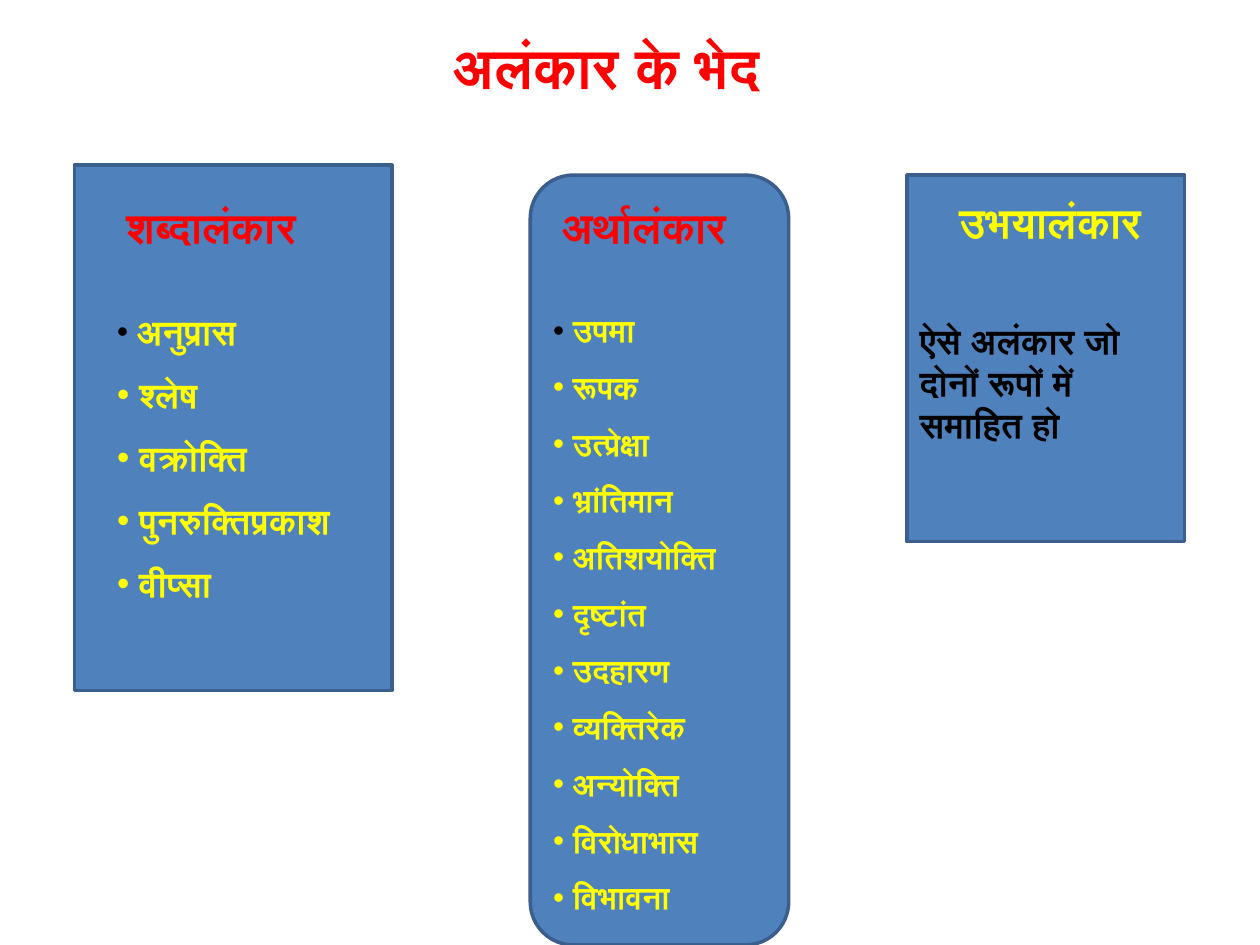
from lxml.etree import SubElement
from pptx import Presentation
from pptx.dml.color import RGBColor
from pptx.enum.shapes import MSO_SHAPE as Shape
from pptx.enum.text import MSO_AUTO_SIZE as AutoSize
from pptx.oxml.ns import qn
from pptx.util import Cm, Pt

COLORS = {
    "panel": "4F81BD",
    "border": "3A5F8C",
    "red": "FF0000",
    "yellow": "FFFF00",
    "black": "000000",
}
FONT = "Calibri"

SHABDA_KINDS = ["अनुप्रास", "श्लेष", "वक्रोक्ति", "पुनरुक्तिप्रकाश", "वीप्सा"]
ARTHA_KINDS = [
    "उपमा", "रूपक", "उत्प्रेक्षा", "भ्रांतिमान", "अतिशयोक्ति", "दृष्टांत",
    "उदहारण", "व्यक्तिरेक", "अन्योक्ति", "विरोधाभास", "विभावना",
]


def color(name):
    return RGBColor.from_string(COLORS[name])


def style(font, size, color_name):
    font.name = FONT
    font.size = Pt(size)
    font.bold = True
    font.color.rgb = color(color_name)


def add_panel(slide, preset, left, top, width, height):
    panel = slide.shapes.add_shape(preset, Cm(left), Cm(top), Cm(width), Cm(height))
    panel.shadow.inherit = False
    panel.fill.solid()
    panel.fill.fore_color.rgb = color("panel")
    panel.line.color.rgb = color("border")
    panel.line.width = Pt(2)


def add_frame(slide, left, top, width, height, wrap):
    box = slide.shapes.add_textbox(Cm(left), Cm(top), Cm(width), Cm(height))
    frame = box.text_frame
    frame.word_wrap = wrap
    frame.auto_size = AutoSize.SHAPE_TO_FIT_TEXT
    return frame


def add_text(slide, text, left, top, width, height, size, color_name, wrap=False):
    paragraph = add_frame(slide, left, top, width, height, wrap).paragraphs[0]
    paragraph.text = text
    style(paragraph.font, size, color_name)


def add_kinds(slide, kinds, left, top, width, height, size, wrap=False):
    """Bulleted list whose first bullet is black, taken from its leading space."""
    frame = add_frame(slide, left, top, width, height, wrap)
    for index, kind in enumerate(kinds):
        paragraph = frame.paragraphs[0] if index == 0 else frame.add_paragraph()
        paragraph.line_spacing = 1.5
        properties = paragraph._p.get_or_add_pPr()
        SubElement(properties, qn("a:buFont"), typeface="Arial")
        SubElement(properties, qn("a:buChar"), char="•")
        if index == 0:
            space, word = paragraph.add_run(), paragraph.add_run()
            space.text, word.text = " ", kind
            style(space.font, 18, "black")
            style(word.font, size, "yellow")
        else:
            paragraph.text = f" {kind}"
            style(paragraph.font, size, "yellow")


def main():
    prs = Presentation()
    prs.slide_width, prs.slide_height = Cm(25.4), Cm(19.05)
    slide = prs.slides.add_slide(prs.slide_layouts[6])

    add_panel(slide, Shape.RECTANGLE, 18.29, 3.53, 5.59, 7.39)
    add_panel(slide, Shape.ROUNDED_RECTANGLE, 10.69, 3.53, 5.21, 15.52)
    add_panel(slide, Shape.RECTANGLE, 1.5, 3.33, 6.4, 10.59)

    add_text(slide, "अलंकार के भेद", 8.89, 0.53, 8.2, 1.63, 32, "red", wrap=True)
    add_text(slide, "शब्दालंकार", 2.31, 3.94, 4.47, 1.27, 24, "red")
    add_text(slide, "अर्थालंकार", 11.1, 3.94, 4.34, 1.27, 24, "red")
    add_text(slide, "उभयालंकार", 19.1, 3.84, 4.78, 1.27, 24, "yellow")

    add_kinds(slide, SHABDA_KINDS, 2.11, 5.72, 5.61, 6.68, 20)
    add_kinds(slide, ARTHA_KINDS, 10.9, 5.77, 5.79, 12.95, 18, wrap=True)
    add_text(slide, "ऐसे अलंकार जो दोनों रूपों में समाहित हो",
             18.29, 6.32, 5.79, 2.82, 20, "black", wrap=True)

    prs.save("out.pptx")


if __name__ == "__main__":
    main()
